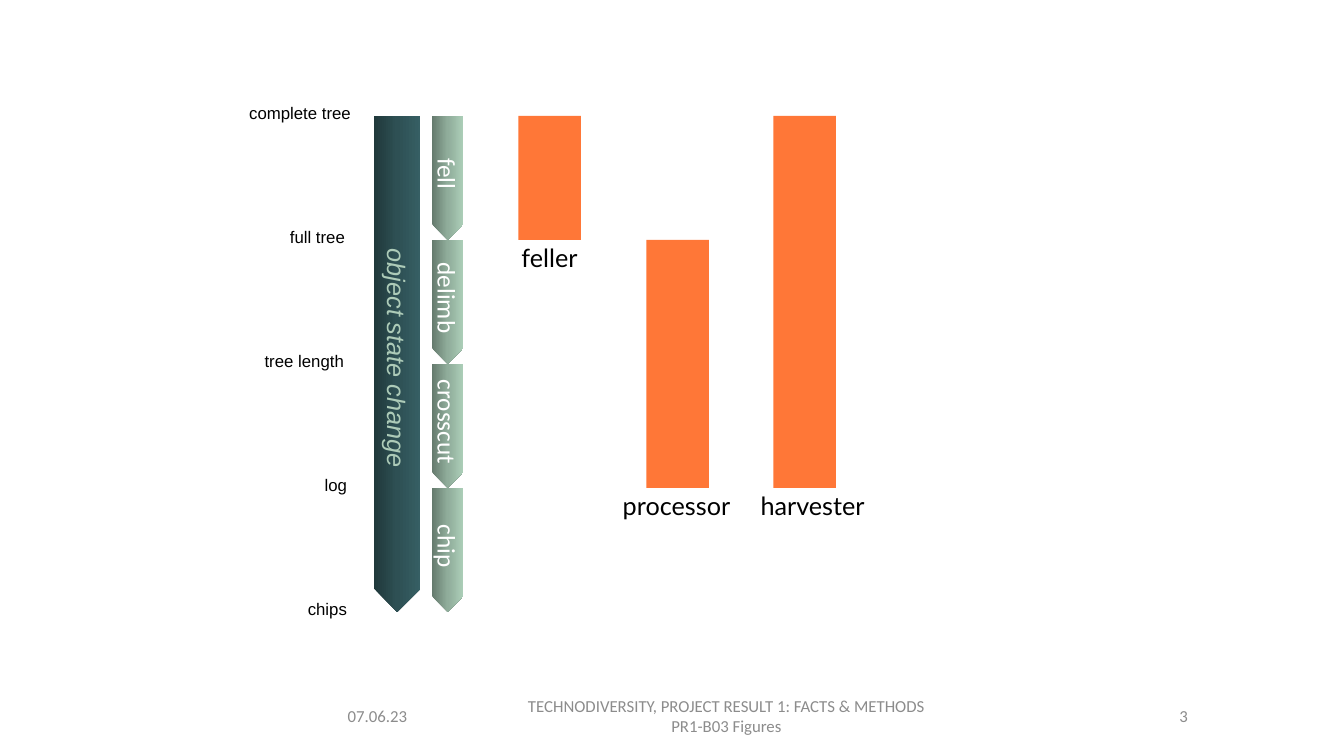
import pptx
import pptx.dml.color
import pptx.enum.shapes
import pptx.enum.text
import pptx.oxml
import pptx.oxml.ns
import pptx.util

ALIGN = pptx.enum.text.PP_ALIGN
ANCHOR = pptx.enum.text.MSO_ANCHOR
SHAPE = pptx.enum.shapes.MSO_SHAPE
INCH = pptx.util.Inches


def colour(code):
    return pptx.dml.color.RGBColor.from_string(code)


class StatePage:
    """Draws process diagrams on one page, with rows marking object states."""

    top = 1.15
    row = 1.23
    bar_width = 0.62
    dark = ("20393B", "2E5054", "365F64")
    light = ("657A6D", "90AD9B", "ABCDB7")
    orange = "FF7737"
    grey = "8C8C8C"

    def __init__(self, deck):
        self.page = deck.slides.add_slide(deck.slide_layouts[6])

    def row_top(self, index):
        return self.top + index * self.row

    def fill_text(self, frame, text, size, font, code, align, italic=None):
        frame.text = text
        for para in frame.paragraphs:
            para.alignment = align
            para.font.size = pptx.util.Pt(size)
            para.font.name = font
            para.font.italic = italic
            para.font.color.rgb = colour(code)

    def text(self, left, top, width, height, text, size, font, code, align, wrap=True, anchor=ANCHOR.TOP):
        box = self.page.shapes.add_textbox(INCH(left), INCH(top), INCH(width), INCH(height))
        frame = box.text_frame
        frame.word_wrap = wrap
        frame.vertical_anchor = anchor
        self.fill_text(frame, text, size, font, code, align)

    def shape(self, kind, left, top, width, height):
        shape = self.page.shapes.add_shape(kind, INCH(left), INCH(top), INCH(width), INCH(height))
        shape.shadow.inherit = False
        shape.line.fill.background()
        return shape

    def arrow(self, centre, first, rows, thickness, stops, text, font, code, italic=None):
        length = rows * self.row
        middle = self.row_top(first) + length / 2
        arrow = self.shape(SHAPE.PENTAGON, centre - length / 2, middle - thickness / 2, length, thickness)
        arrow.rotation = 90
        arrow.fill.gradient()
        arrow.fill.gradient_angle = 90
        stop_list = arrow.element.spPr.find(".//" + pptx.oxml.ns.qn("a:gsLst"))
        for stop in list(stop_list):
            stop_list.remove(stop)
        for index, stop_code in enumerate(stops):
            stop_list.append(pptx.oxml.parse_xml(
                f'<a:gs {pptx.oxml.ns.nsdecls("a")} pos="{index * 50000}">'
                f'<a:srgbClr val="{stop_code}"/></a:gs>'))
        arrow.text_frame.vertical_anchor = ANCHOR.MIDDLE
        self.fill_text(arrow.text_frame, text, 18, font, code, ALIGN.CENTER, italic)

    def state(self, index, text, right, width):
        self.text(right - width, self.row_top(index) - 0.18, width, 0.3, text,
                  12, "Arial", "000000", ALIGN.RIGHT, wrap=False)

    def machine(self, text, left, first, last, label_centre):
        top, bottom = self.row_top(first), self.row_top(last)
        bar = self.shape(SHAPE.ROUNDED_RECTANGLE, left, top, self.bar_width, bottom - top)
        bar.adjustments[0] = 0
        bar.fill.solid()
        bar.fill.fore_color.rgb = colour(self.orange)
        self.text(label_centre - 0.8, bottom - 0.02, 1.6, 0.4, text, 18, "Lato", "000000", ALIGN.CENTER)

    def footer(self, left, width, text, align):
        self.text(left, 6.9, width, 0.4, text, 12, "Calibri", self.grey, align, anchor=ANCHOR.MIDDLE)


def main():
    deck = pptx.Presentation()
    deck.slide_width, deck.slide_height = INCH(13.33), INCH(7.5)
    page = StatePage(deck)

    page.footer(3.35, 1.34, "07.06.23", ALIGN.LEFT)
    page.footer(4.86, 4.69, "TECHNODIVERSITY, PROJECT RESULT 1: FACTS & METHODS\nPR1-B03 Figures", ALIGN.CENTER)
    page.footer(9.77, 2.11, "3", ALIGN.RIGHT)

    page.arrow(3.94, 0, 4, 0.46, page.dark, "object state change", "Arial", "ADCBB8", italic=True)
    states = [("complete tree", 3.58, 1.22), ("full tree", 3.52, 0.75), ("tree length", 3.51, 0.99),
              ("log", 3.54, 0.42), ("chips", 3.54, 0.59)]
    for index, (text, right, width) in enumerate(states):
        page.state(index, text, right, width)
    for index, text in enumerate(["fell", "delimb", "crosscut", "chip"]):
        page.arrow(4.44, index, 1, 0.31, page.light, text, "Calibri", "FFFFFF")

    page.machine("feller", 5.14, 0, 1, 5.45)
    page.machine("processor", 6.41, 1, 3, 6.71)
    page.machine("harvester", 7.67, 0, 3, 8.06)
    deck.save("out.pptx")


if __name__ == "__main__":
    main()
